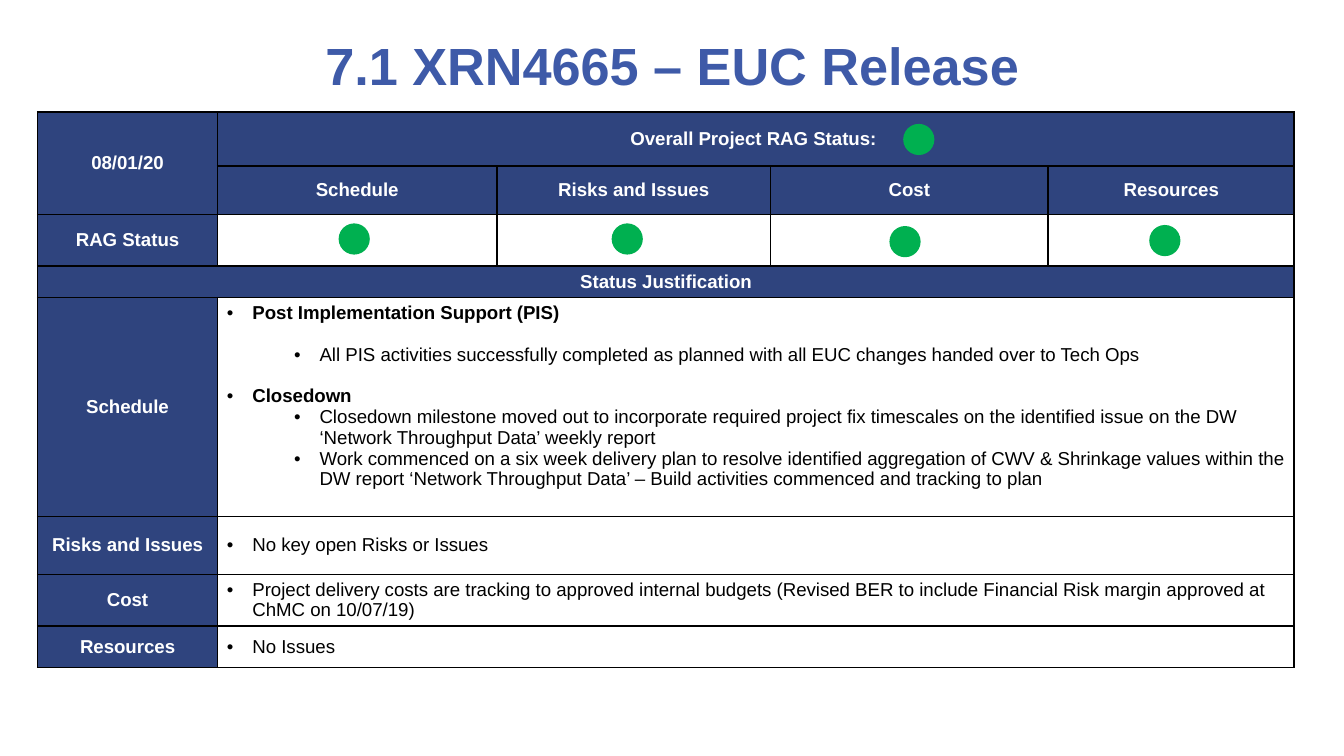
from pptx import Presentation
from pptx.dml.color import RGBColor
from pptx.enum.shapes import MSO_SHAPE
from pptx.enum.text import MSO_ANCHOR, PP_ALIGN
from pptx.oxml.ns import qn
from pptx.util import Cm, Pt
from lxml.etree import SubElement

TITLE_BLUE = RGBColor(0x3E, 0x5A, 0xA8)
NAVY = RGBColor(0x2F, 0x44, 0x7E)
GREEN = RGBColor(0x00, 0xB0, 0x50)
WHITE = RGBColor(0xFF, 0xFF, 0xFF)
BLACK = RGBColor(0x00, 0x00, 0x00)

COLUMN_WIDTHS = [3.4, 5.28, 5.17, 5.25, 4.65]
ROW_HEIGHTS = [1.02, 0.91, 0.97, 0.6, 4.14, 1.09, 0.97, 0.79]
MERGES = [(0, 0, 1, 0), (0, 1, 0, 4), (3, 0, 3, 4)] + [
    (row, 1, row, 4) for row in range(4, 8)
]

TITLE_FONT = {"name": "Arial", "size": Pt(28), "bold": True}
HEADING_FONT = {"name": "Arial", "size": Pt(10), "bold": True}
BODY_FONT = HEADING_FONT | {"bold": False}
CELL_FORMAT = {
    "margin_left": Cm(0.18),
    "margin_right": Cm(0.18),
    "margin_top": Cm(0.06),
    "margin_bottom": Cm(0.06),
    "vertical_anchor": MSO_ANCHOR.MIDDLE,
}
SCHEDULE_FORMAT = {"margin_top": Cm(0.1), "vertical_anchor": MSO_ANCHOR.TOP}

HEADINGS = {
    (0, 0): "08/01/20",
    (0, 1): "Overall Project RAG Status: ",
    (1, 1): "Schedule",
    (1, 2): "Risks and Issues",
    (1, 3): "Cost",
    (1, 4): "Resources",
    (2, 0): "RAG Status",
    (3, 0): "Status Justification",
    (4, 0): "Schedule",
    (5, 0): "Risks and Issues",
    (6, 0): "Cost",
    (7, 0): "Resources",
}

BULLETS = {
    4: [
        (0, True, 0, "Post Implementation Support (PIS)"),
        (1, False, 11, "All PIS activities successfully completed as planned with all "
         "EUC changes handed over to Tech Ops"),
        (0, True, 11, "Closedown"),
        (1, False, 0, "Closedown milestone moved out to incorporate required project fix "
         "timescales on the identified issue on the DW ‘Network Throughput Data’ weekly report"),
        (1, False, 0, "Work commenced on a six week delivery plan to resolve identified "
         "aggregation of CWV & Shrinkage values within the DW report "
         "‘Network Throughput Data’ – Build activities commenced and tracking to plan"),
    ],
    5: [(0, False, 0, "No key open Risks or Issues")],
    6: [(0, False, 0, "Project delivery costs are tracking to approved internal budgets "
         "(Revised BER to include Financial Risk margin approved at ChMC on 10/07/19)")],
    7: [(0, False, 0, "No Issues")],
}

STATUS_DOTS = [(17.07, 2.34), (6.4, 4.22), (11.56, 4.22), (16.81, 4.27), (21.72, 4.25)]


def apply_format(target, values):
    for name, value in values.items():
        setattr(target, name, value)


def add_text(paragraph, text, font, color):
    run = paragraph.add_run()
    run.text = text
    apply_format(run.font, font)
    run.font.color.rgb = color


def add_title(slide, text):
    shape = slide.shapes.add_textbox(Cm(1.27), Cm(0.33), Cm(22.86), Cm(1.78))
    frame = shape.text_frame
    apply_format(frame, {"word_wrap": True, "vertical_anchor": MSO_ANCHOR.MIDDLE})
    paragraph = frame.paragraphs[0]
    paragraph.alignment = PP_ALIGN.CENTER
    add_text(paragraph, text, TITLE_FONT, TITLE_BLUE)


def set_borders(cell):
    properties = cell._tc.get_or_add_tcPr()
    for side in ("a:lnL", "a:lnR", "a:lnT", "a:lnB"):
        line = SubElement(properties, qn(side), w=str(Pt(1)))
        fill = SubElement(line, qn("a:solidFill"))
        SubElement(fill, qn("a:srgbClr"), val=str(BLACK))


def fill_cell(cell, color):
    cell.fill.solid()
    cell.fill.fore_color.rgb = color


def add_heading(cell, text):
    fill_cell(cell, NAVY)
    paragraph = cell.text_frame.paragraphs[0]
    paragraph.alignment = PP_ALIGN.CENTER
    add_text(paragraph, text, HEADING_FONT, WHITE)


def add_bullets(cell, items):
    frame = cell.text_frame
    for index, (level, bold, space, text) in enumerate(items):
        paragraph = frame.add_paragraph() if index else frame.paragraphs[0]
        properties = paragraph._p.get_or_add_pPr()
        properties.set("marL", str(Cm(0.48 + 1.27 * level)))
        properties.set("indent", str(-Cm(0.48)))
        SubElement(properties, qn("a:buFont"), typeface="Arial")
        SubElement(properties, qn("a:buChar"), char="•")
        apply_format(paragraph, {"level": level, "space_before": Pt(space)})
        add_text(paragraph, text, BODY_FONT | {"bold": bold}, BLACK)


def add_status_table(slide):
    frame = slide.shapes.add_table(
        len(ROW_HEIGHTS), len(COLUMN_WIDTHS), Cm(0.71), Cm(2.12),
        Cm(sum(COLUMN_WIDTHS)), Cm(sum(ROW_HEIGHTS)),
    )
    table = frame.table
    apply_format(table, {"first_row": False, "horz_banding": False})
    for column, width in zip(table.columns, COLUMN_WIDTHS):
        column.width = Cm(width)
    for row, height in zip(table.rows, ROW_HEIGHTS):
        row.height = Cm(height)
    for cell in table.iter_cells():
        apply_format(cell, CELL_FORMAT)
        set_borders(cell)
        fill_cell(cell, WHITE)
    for top, left, bottom, right in MERGES:
        table.cell(top, left).merge(table.cell(bottom, right))
    for position, text in HEADINGS.items():
        add_heading(table.cell(*position), text)
    for row, items in BULLETS.items():
        add_bullets(table.cell(row, 1), items)
    apply_format(table.cell(4, 1), SCHEDULE_FORMAT)


def add_status_dot(slide, left, top):
    shape = slide.shapes.add_shape(MSO_SHAPE.OVAL, Cm(left), Cm(top), Cm(0.59), Cm(0.59))
    shape.shadow.inherit = False
    shape.fill.solid()
    shape.fill.fore_color.rgb = GREEN
    shape.line.fill.background()


def main():
    presentation = Presentation()
    apply_format(presentation, {"slide_width": Cm(25.4), "slide_height": Cm(14.28)})
    slide = presentation.slides.add_slide(presentation.slide_layouts[6])
    add_title(slide, "7.1 XRN4665 – EUC Release")
    add_status_table(slide)
    for left, top in STATUS_DOTS:
        add_status_dot(slide, left, top)
    presentation.save("out.pptx")


if __name__ == "__main__":
    main()
